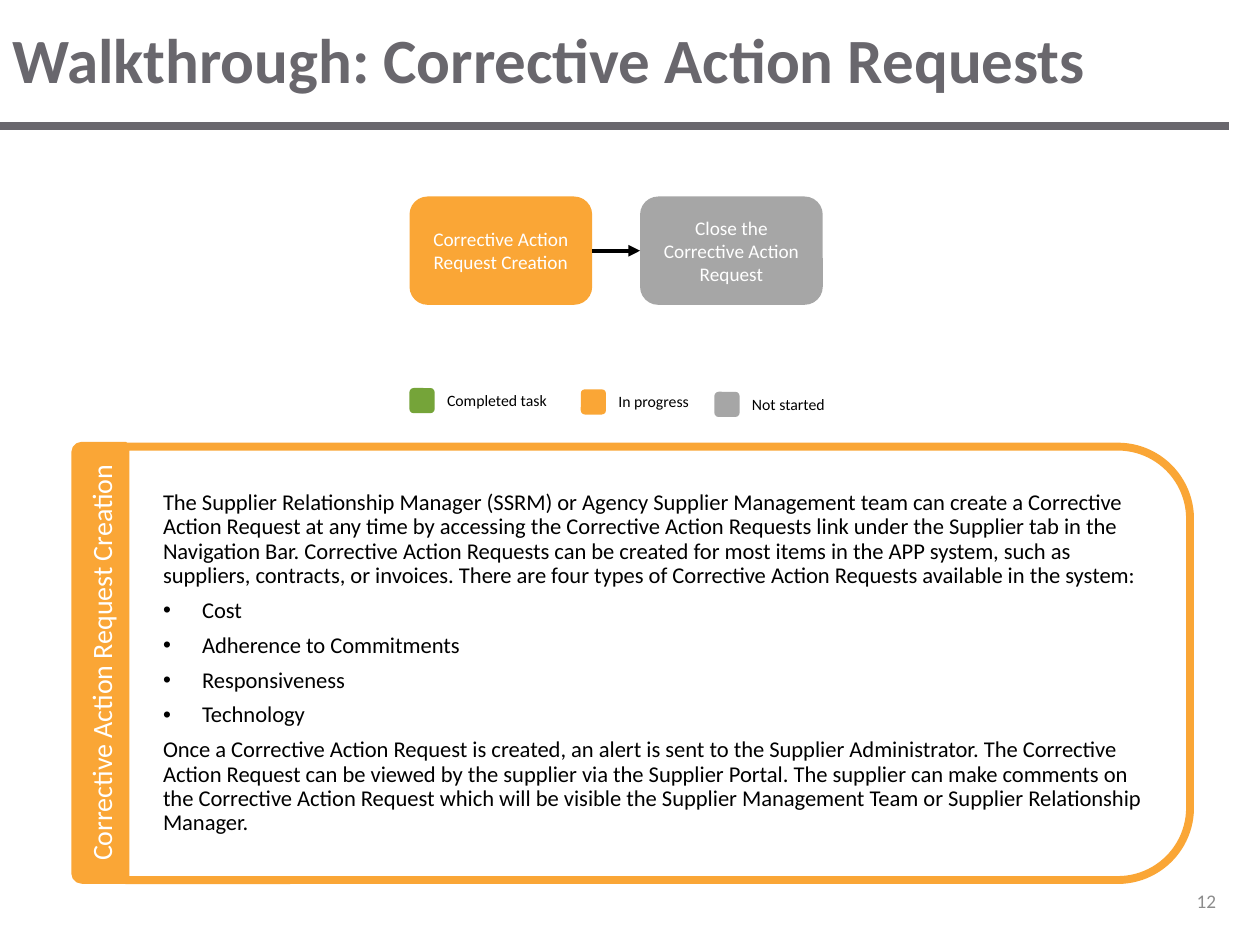
from dataclasses import dataclass

from lxml import etree
from pptx import Presentation
from pptx.dml.color import RGBColor
from pptx.enum.shapes import MSO_CONNECTOR, MSO_SHAPE
from pptx.enum.text import MSO_ANCHOR, PP_ALIGN
from pptx.oxml.ns import qn
from pptx.util import Inches, Pt

ROUNDED = MSO_SHAPE.ROUNDED_RECTANGLE
TOP_ROUNDED = MSO_SHAPE.ROUND_2_SAME_RECTANGLE
STRAIGHT = MSO_CONNECTOR.STRAIGHT
LEFT, CENTER, RIGHT = PP_ALIGN.LEFT, PP_ALIGN.CENTER, PP_ALIGN.RIGHT
TOP, MIDDLE = MSO_ANCHOR.TOP, MSO_ANCHOR.MIDDLE
RIGHT_SITE, LEFT_SITE = 3, 1

FONT = "Calibri"
SLATE, ORANGE, GREEN, GRAY = "69676D", "FAA636", "75A439", "A6A6A6"
BLACK, WHITE, PAGE_GRAY = "000000", "FFFFFF", "8C8C8C"


@dataclass
class Box:
    left: float
    top: float
    width: float
    height: float

    def lengths(self):
        return [Inches(v) for v in (self.left, self.top, self.width, self.height)]


@dataclass
class Step:
    text: str
    color: str


@dataclass
class LegendItem:
    text: str
    color: str
    left: float
    top: float


@dataclass
class BodyParagraph:
    text: str
    bullet: bool = False


STEPS = [
    Step("Corrective Action Request Creation", ORANGE),
    Step("Close the Corrective Action Request", GRAY),
]
LEGEND = [
    LegendItem("Completed task", GREEN, 3.25, 3.08),
    LegendItem("In progress", ORANGE, 4.61, 3.09),
    LegendItem("Not started", GRAY, 5.67, 3.11),
]
BODY = [
    BodyParagraph(
        "The Supplier Relationship Manager (SSRM) or Agency Supplier Management team can "
        "create a Corrective Action Request at any time by accessing the Corrective Action "
        "Requests link under the Supplier tab in the Navigation Bar. Corrective Action "
        "Requests can be created for most items in the APP system, such as suppliers, "
        "contracts, or invoices. There are four types of Corrective Action Requests "
        "available in the system:"
    ),
    BodyParagraph("Cost", bullet=True),
    BodyParagraph("Adherence to Commitments", bullet=True),
    BodyParagraph("Responsiveness", bullet=True),
    BodyParagraph("Technology", bullet=True),
    BodyParagraph(
        "Once a Corrective Action Request is created, an alert is sent to the Supplier "
        "Administrator. The Corrective Action Request can be viewed by the supplier via the "
        "Supplier Portal. The supplier can make comments on the Corrective Action Request "
        "which will be visible the Supplier Management Team or Supplier Relationship Manager."
    ),
]


def rgb(color: str) -> RGBColor:
    return RGBColor.from_string(color)


def write_text(paragraph, text: str, *, size: float, color: str, bold=False, align=LEFT):
    paragraph.alignment = align
    run = paragraph.add_run()
    run.text = text
    run.font.name = FONT
    run.font.size = Pt(size)
    run.font.bold = bold
    run.font.color.rgb = rgb(color)


def fill_frame(shape, text: str, *, anchor=MIDDLE, **text_format):
    frame = shape.text_frame
    frame.word_wrap = True
    frame.vertical_anchor = anchor
    write_text(frame.paragraphs[0], text, **text_format)


def add_label(slide, box: Box, text: str, **text_format):
    fill_frame(slide.shapes.add_textbox(*box.lengths()), text, **text_format)


def add_block(slide, kind, box: Box, *, fill=None, line=None, line_width=0.0, rotation=0):
    shape = slide.shapes.add_shape(kind, *box.lengths())
    shape.shadow.inherit = False
    shape.rotation = rotation
    if fill:
        shape.fill.solid()
        shape.fill.fore_color.rgb = rgb(fill)
    else:
        shape.fill.background()
    if line:
        shape.line.color.rgb = rgb(line)
        shape.line.width = Pt(line_width)
    else:
        shape.line.fill.background()
    return shape


def add_line(slide, start, end, *, color: str, width: float, arrow=False):
    points = [Inches(v) for v in (*start, *end)]
    connector = slide.shapes.add_connector(STRAIGHT, *points)
    connector.line.color.rgb = rgb(color)
    connector.line.width = Pt(width)
    properties = connector._element.spPr
    if arrow:
        etree.SubElement(properties.find(qn("a:ln")), qn("a:tailEnd"), type="triangle")
    etree.SubElement(properties, qn("a:effectLst"))
    return connector


def add_flow(slide):
    width, height, pitch, left, top = 1.45, 0.86, 1.83, 3.25, 1.56
    middle = top + height / 2
    blocks = []
    for index, step in enumerate(STEPS):
        box = Box(left + index * pitch, top, width, height)
        block = add_block(slide, ROUNDED, box, fill=step.color)
        fill_frame(block, step.text, size=11, color=WHITE, align=CENTER)
        blocks.append(block)
    arrow = add_line(slide, (left + width, middle), (left + pitch, middle),
                     color=BLACK, width=2.25, arrow=True)
    arrow.begin_connect(blocks[0], RIGHT_SITE)
    arrow.end_connect(blocks[1], LEFT_SITE)


def add_legend(slide):
    side = 0.2
    for item in LEGEND:
        add_block(slide, ROUNDED, Box(item.left, item.top, side, side), fill=item.color)
        add_label(slide, Box(item.left + side, item.top - 0.03, 1.93, 0.25), item.text,
                  size=9, color=BLACK, anchor=TOP)


def add_description(slide):
    """Draw the sideways tab and the panel, whose text is turned back upright."""
    tab = add_block(slide, TOP_ROUNDED, Box(-0.95, 5.05, 3.48, 0.42),
                    fill=ORANGE, line=ORANGE, line_width=2, rotation=270)
    fill_frame(tab, STEPS[0].text, size=16, color=WHITE, align=CENTER)

    panel = add_block(slide, TOP_ROUNDED, Box(3.5, 1.04, 3.44, 8.45),
                      line=ORANGE, line_width=4.5, rotation=90)
    frame = panel.text_frame
    frame.word_wrap = True
    frame.vertical_anchor = MIDDLE
    frame._txBody.bodyPr.set("vert", "vert270")
    for index, item in enumerate(BODY):
        paragraph = frame.add_paragraph() if index else frame.paragraphs[0]
        write_text(paragraph, item.text, size=12.9, color=BLACK)
        paragraph.line_spacing = 0.9
        paragraph.space_after = Pt(6)
        properties = paragraph._p.get_or_add_pPr()
        margin, indent = (0.51, -0.31) if item.bullet else (0.2, 0)
        properties.set("marL", str(Inches(margin)))
        properties.set("indent", str(Inches(indent)))
        if item.bullet:
            etree.SubElement(properties, qn("a:buFont"), typeface="Arial")
            etree.SubElement(properties, qn("a:buChar"), char="•")


def main():
    presentation = Presentation()
    presentation.slide_width = Inches(10)
    presentation.slide_height = Inches(7.5)
    slide = presentation.slides.add_slide(presentation.slide_layouts[6])

    add_line(slide, (0, 1), (9.75, 1), color=SLATE, width=5)
    add_label(slide, Box(0, 0, 10, 0.92), "Walkthrough: Corrective Action Requests",
              size=36, color=SLATE, bold=True)
    add_label(slide, Box(8.08, 6.95, 1.67, 0.4), "12",
              size=11, color=PAGE_GRAY, align=RIGHT)
    add_legend(slide)
    add_description(slide)
    add_flow(slide)
    presentation.save("out.pptx")


if __name__ == "__main__":
    main()
